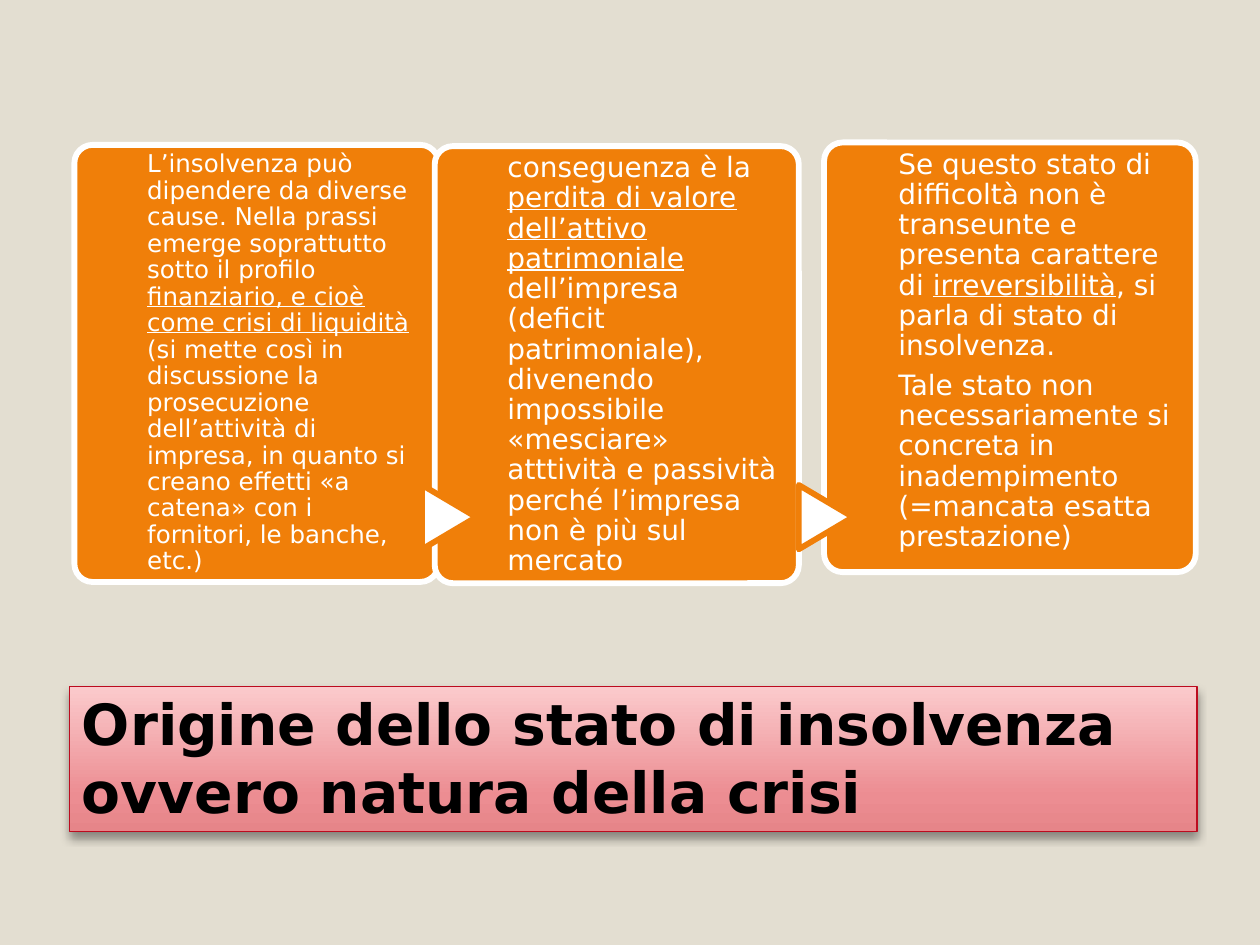
from copy import deepcopy
from dataclasses import dataclass
from typing import Optional

from lxml.etree import SubElement
from pptx import Presentation
from pptx.dml.color import RGBColor as Rgb
from pptx.enum.shapes import MSO_SHAPE as Kind
from pptx.enum.text import MSO_ANCHOR as Anchor, MSO_AUTO_SIZE as Fit, PP_ALIGN as Align
from pptx.oxml.ns import qn
from pptx.util import Pt

FONT = "DejaVu Sans"
HUES = {
    "back": "E3DED1", "panel": "F07F09", "white": "FFFFFF", "black": "000000",
    "edge": "BC0B1F", "low": "E68589", "mid": "EC8D92", "high": "FBCACC",
}
EDGE = 3.35
TIP_TOP, TIP_W, TIP_H = 280, 36.7, 31


@dataclass
class Part:
    text: str
    under: bool = False


@dataclass
class Panel:
    left: float
    top: float
    wide: float
    high: float
    size: float
    paras: list[list[Part]]
    tip: Optional[float] = None


PANELS = [
    Panel(42.5, 82.8, 208.1, 249.8, 14, [[
        Part("L’insolvenza può dipendere da diverse cause. Nella prassi emerge "
             "soprattutto sotto il profilo "),
        Part("finanziario, e cioè come crisi di liquidità", True),
        Part(" (si mette così in discussione la prosecuzione dell’attività di impresa, "
             "in quanto si creano effetti «a catena» con i fornitori, le banche, etc.)"),
    ]]),
    Panel(248.4, 83.5, 208.1, 249.8, 16, [[
        Part("conseguenza è la "),
        Part("perdita di valore dell’attivo patrimoniale ", True),
        Part("dell’impresa (deficit patrimoniale), divenendo impossibile «mesciare» "
             "atttività e passività perché l’impresa non è più sul mercato"),
    ]], 238.3),
    Panel(470.9, 81.4, 212.4, 245.5, 16, [[
        Part("Se questo stato di difficoltà non è transeunte e presenta carattere di "),
        Part("irreversibilità", True),
        Part(", si parla di stato di insolvenza."),
    ], [
        Part("Tale stato non necessariamente si concreta in inadempimento "
             "(=mancata esatta prestazione)"),
    ]], 453.6),
]


def hue(name: str) -> Rgb:
    return Rgb.from_string(HUES[name])


def add_form(slide, kind, box: tuple, fill: str, line: str):
    form = slide.shapes.add_shape(kind, *map(Pt, box))
    form.shadow.inherit = False
    form.fill.solid()
    form.fill.fore_color.rgb = hue(fill)
    form.line.color.rgb = hue(line)
    form.line.width = Pt(EDGE)
    return form


def add_text(slide, panel: Panel) -> None:
    box = (panel.left + 0.2 * panel.wide, panel.top, 0.747 * panel.wide, panel.high)
    frame = slide.shapes.add_textbox(*map(Pt, box)).text_frame
    frame.word_wrap = True
    frame.auto_size = Fit.NONE
    frame.vertical_anchor = Anchor.TOP
    frame.margin_left = frame.margin_right = frame.margin_bottom = 0
    frame.margin_top = Pt(0.27 * panel.size)
    for rank, parts in enumerate(panel.paras):
        para = frame.add_paragraph() if rank else frame.paragraphs[0]
        para.line_spacing = 0.9
        para.space_after = Pt(0.35 * panel.size)
        for part in parts:
            run = para.add_run()
            run.text = part.text
            run.font.name = FONT
            run.font.size = Pt(panel.size)
            run.font.color.rgb = hue("white")
            run.font.underline = part.under


def add_panel(slide, panel: Panel) -> None:
    box = (panel.left, panel.top, panel.wide, panel.high)
    card = add_form(slide, Kind.ROUNDED_RECTANGLE, box, "panel", "white")
    card.adjustments[0] = 0.05
    if panel.tip is not None:
        box = (panel.tip, TIP_TOP, TIP_W, TIP_H)
        tip = add_form(slide, Kind.FLOWCHART_EXTRACT, box, "white", "panel")
        tip.rotation = 90
    add_text(slide, panel)


def add_shade(shape) -> None:
    shape.shadow.inherit = False
    effects = shape._element.spPr.find(qn("a:effectLst"))
    shade = SubElement(effects, qn("a:outerShdw"), blurRad=str(Pt(5.2)),
                       dist=str(Pt(3)), dir="5400000", rotWithShape="0")
    color = SubElement(shade, qn("a:srgbClr"), val=HUES["black"])
    SubElement(color, qn("a:alpha"), val="40000")


def set_blend(shape) -> None:
    shape.fill.gradient()
    shape.fill.gradient_angle = 90
    stops = shape._element.spPr.find(qn("a:gradFill")).find(qn("a:gsLst"))
    stops.insert(1, deepcopy(stops[0]))
    marks = [(0, "low"), (0.25, "mid"), (1, "high")]
    for stop, (spot, name) in zip(shape.fill.gradient_stops, marks):
        stop.position = spot
        stop.color.rgb = hue(name)


def set_title(title) -> None:
    title.left, title.top, title.width, title.height = map(Pt, (39.6, 392.4, 644.4, 82.8))
    set_blend(title)
    title.line.color.rgb = hue("edge")
    title.line.width = Pt(0.75)
    add_shade(title)
    frame = title.text_frame
    frame.text = "Origine dello stato di insolvenza ovvero natura della crisi"
    frame.word_wrap = True
    frame.auto_size = Fit.NONE
    frame.vertical_anchor = Anchor.BOTTOM
    para = frame.paragraphs[0]
    para.alignment = Align.LEFT
    font = para.runs[0].font
    font.name = FONT
    font.size = Pt(32.4)
    font.bold = True
    font.color.rgb = hue("black")


def main() -> None:
    deck = Presentation()
    deck.slide_width, deck.slide_height = Pt(720), Pt(540)
    slide = deck.slides.add_slide(deck.slide_layouts[5])
    back = slide.background.fill
    back.solid()
    back.fore_color.rgb = hue("back")
    set_title(slide.shapes.title)
    for panel in PANELS:
        add_panel(slide, panel)
    deck.save("out.pptx")


if __name__ == "__main__":
    main()
